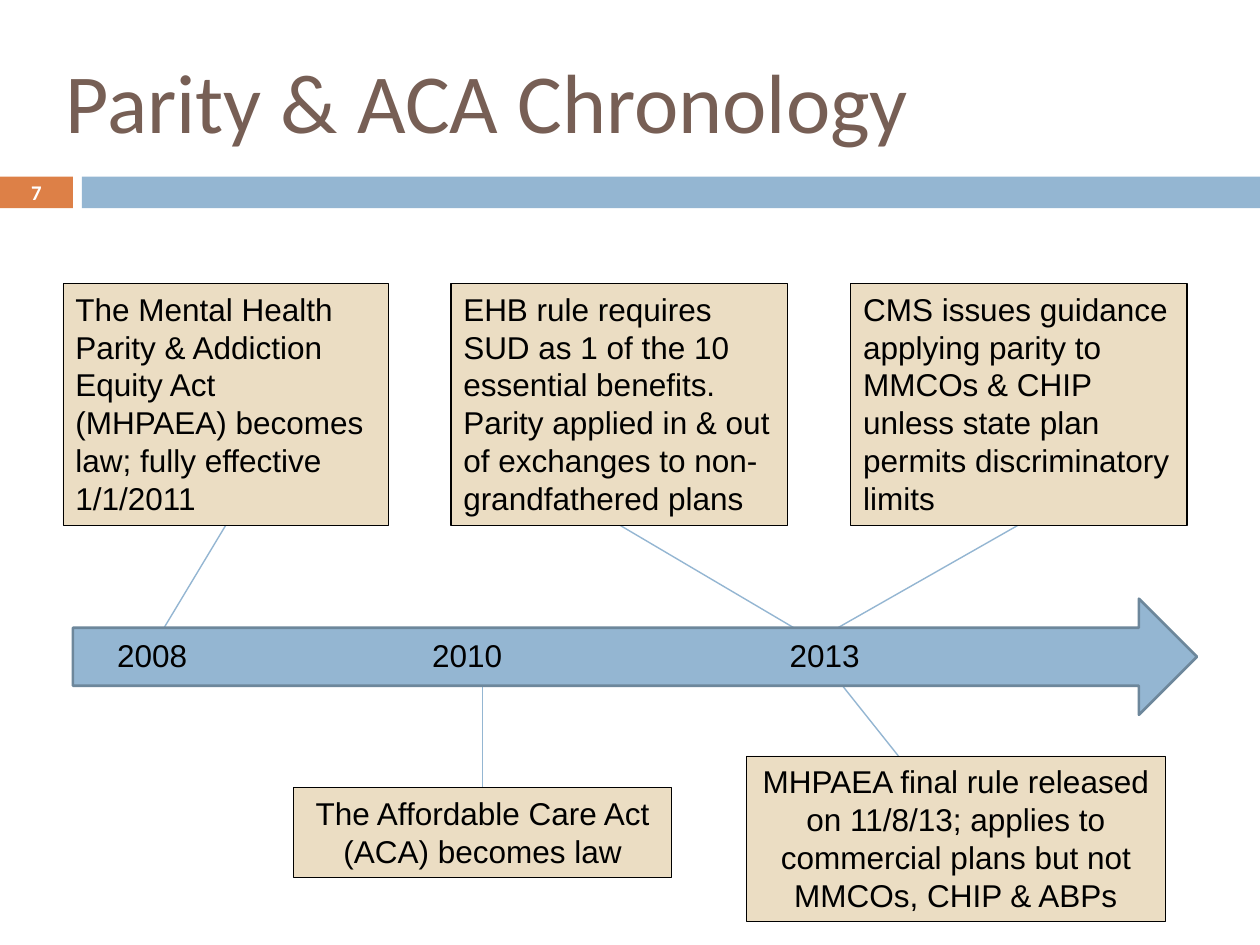
from dataclasses import dataclass

from lxml.etree import SubElement
from pptx import Presentation
from pptx.dml.color import RGBColor
from pptx.enum.shapes import MSO_CONNECTOR, MSO_SHAPE
from pptx.enum.text import MSO_ANCHOR, PP_ALIGN
from pptx.oxml.ns import qn
from pptx.util import Cm, Pt

BLUE, ORANGE, SAND = "94B6D2", "DD8047", "EBDDC3"
BLACK, WHITE, BROWN, SLATE = "000000", "FFFFFF", "775F55", "6D879B"
LEFT, MID = PP_ALIGN.LEFT, PP_ALIGN.CENTER
TOP, BASE = 5.72, 10.59  # upper row of event boxes
AXIS, FOOT = 12.7, 13.77  # edges of the arrow shaft


@dataclass
class Event:
    text: str
    x: float
    y: float
    w: float
    h: float
    edge: float = 0.25
    align: PP_ALIGN = LEFT


@dataclass
class Link:
    x1: float
    y1: float
    x2: float
    y2: float


@dataclass
class Year:
    text: str
    x: float


EVENTS = [
    Event("The Mental Health Parity & Addiction Equity Act (MHPAEA) becomes law; "
          "fully effective 1/1/2011", 1.27, TOP, 6.55, BASE - TOP),
    Event("EHB rule requires SUD as 1 of the 10 essential benefits. Parity applied "
          "in & out of exchanges to non-grandfathered plans",
          9.09, TOP, 6.78, BASE - TOP, 0.75),
    Event("CMS issues guidance applying parity to MMCOs & CHIP unless state plan "
          "permits discriminatory limits", 17.15, TOP, 6.78, BASE - TOP, 0.75),
    Event("The Affordable Care Act (ACA) becomes law",
          5.92, 15.88, 7.62, 1.8, align=MID),
    Event("MHPAEA final rule released on 11/8/13; applies to commercial plans "
          "but not MMCOs, CHIP & ABPs", 15.04, 15.24, 8.46, 3.33, align=MID),
]
LINKS = [
    Link(3.28, AXIS, 4.55, BASE),
    Link(9.73, FOOT, 9.73, 16.08),
    Link(12.5, BASE, 16.08, AXIS),
    Link(16.81, AXIS, 20.52, BASE),
    Link(16.94, FOOT, 18.62, 15.88),
]
YEARS = [Year("2008", 2.11), Year("2010", 8.46), Year("2013", 15.67)]


def color(code: str) -> RGBColor:
    return RGBColor.from_string(code)


def write(shape, text: str, size: float = 18, font: str = "Arial",
          ink: str = BLACK, align: PP_ALIGN = LEFT,
          anchor: MSO_ANCHOR = MSO_ANCHOR.TOP, bold: bool = False) -> None:
    frame = shape.text_frame
    frame.text = text
    frame.word_wrap = True
    frame.vertical_anchor = anchor
    par = frame.paragraphs[0]
    par.alignment = align
    face = par.runs[0].font
    face.name, face.size, face.bold = font, Pt(size), bold
    face.color.rgb = color(ink)


def draw(slide, kind: MSO_SHAPE, x: float, y: float, w: float, h: float,
         fill: str, line: str = "", edge: float = 0):
    shape = slide.shapes.add_shape(kind, Cm(x), Cm(y), Cm(w), Cm(h))
    shape.shadow.inherit = False
    shape.fill.solid()
    shape.fill.fore_color.rgb = color(fill)
    if line:
        shape.line.color.rgb = color(line)
        shape.line.width = Pt(edge)
    else:
        shape.line.fill.background()
    return shape


def label(slide, x: float, y: float, w: float, h: float):
    return slide.shapes.add_textbox(Cm(x), Cm(y), Cm(w), Cm(h))


def join(slide, link: Link) -> None:
    line = slide.shapes.add_connector(
        MSO_CONNECTOR.STRAIGHT,
        Cm(link.x1), Cm(link.y1), Cm(link.x2), Cm(link.y2))
    line.line.color.rgb = color(BLUE)
    line.line.width = Pt(0.79)
    SubElement(line._element.spPr, qn("a:effectLst"))


def main() -> None:
    deck = Presentation()
    deck.slide_width, deck.slide_height = Cm(25.4), Cm(19.05)
    slide = deck.slides.add_slide(deck.slide_layouts[5])

    # Title
    title = slide.shapes.title
    title.left, title.top = Cm(1.07), Cm(0.64)
    title.width, title.height = Cm(22.86), Cm(2.74)
    write(title, "Parity & ACA Chronology", 48, "Calibri", BROWN,
          anchor=MSO_ANCHOR.MIDDLE)

    # Header band and page number
    draw(slide, MSO_SHAPE.RECTANGLE, 0, 3.56, 1.47, 0.64, ORANGE)
    draw(slide, MSO_SHAPE.RECTANGLE, 1.65, 3.56, 23.75, 0.64, BLUE)
    write(label(slide, 0, 3.54, 1.47, 0.68), "7", 11.9, "Calibri", WHITE,
          MID, MSO_ANCHOR.MIDDLE, True)

    # Timeline with its links
    for link in LINKS:
        join(slide, link)
    draw(slide, MSO_SHAPE.RIGHT_ARROW, 1.47, 12.07, 22.66, 2.34,
         BLUE, SLATE, 1.5)
    for year in YEARS:
        write(label(slide, year.x, AXIS, 2.34, 1.02), year.text)

    # Event boxes
    for item in EVENTS:
        box = draw(slide, MSO_SHAPE.RECTANGLE, item.x, item.y, item.w, item.h,
                   SAND, BLACK, item.edge)
        write(box, item.text, align=item.align)

    deck.save("out.pptx")


if __name__ == "__main__":
    main()
